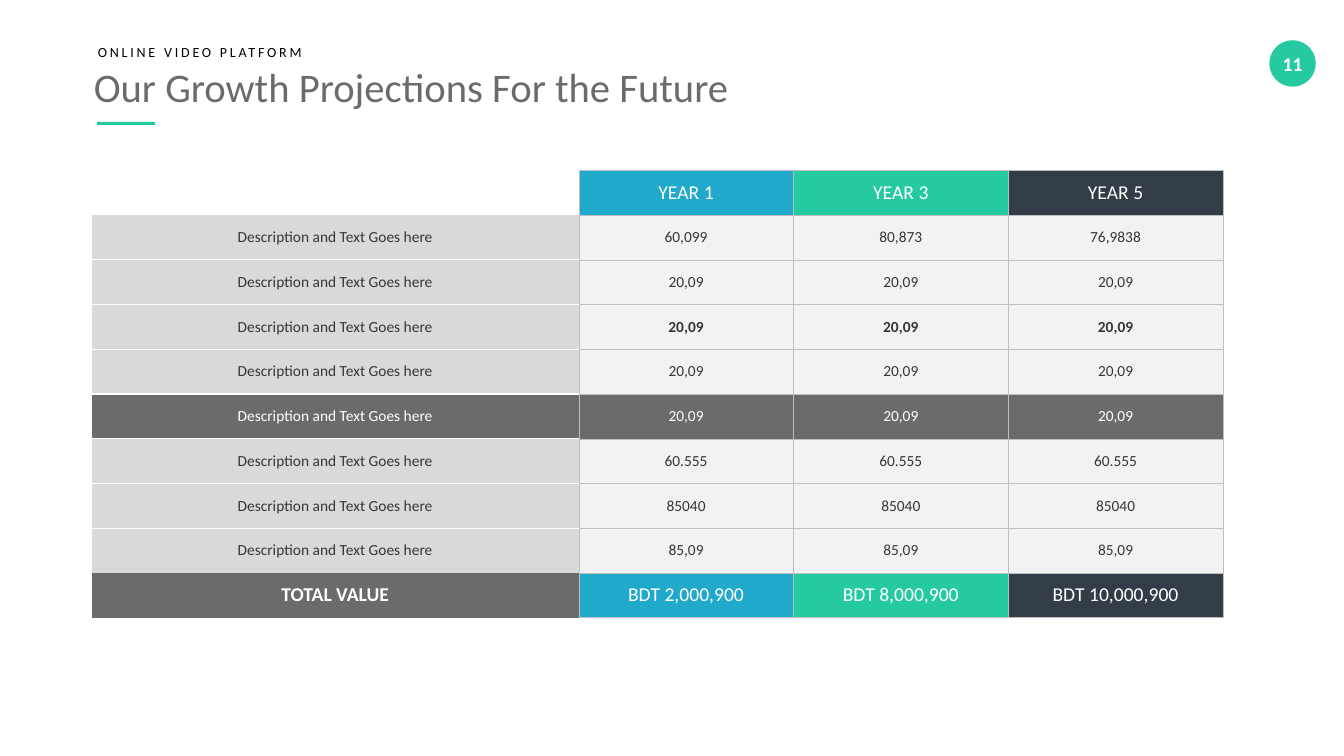
from lxml import etree
from pptx import Presentation
from pptx.dml.color import RGBColor
from pptx.enum.shapes import MSO_SHAPE
from pptx.enum.text import MSO_ANCHOR, MSO_AUTO_SIZE, PP_ALIGN
from pptx.oxml.ns import qn
from pptx.util import Inches, Pt

LEFT, CENTER = PP_ALIGN.LEFT, PP_ALIGN.CENTER
MIDDLE = MSO_ANCHOR.MIDDLE
FIXED = MSO_AUTO_SIZE.NONE
OVAL, RECT = MSO_SHAPE.OVAL, MSO_SHAPE.RECTANGLE

WHITE = RGBColor(0xFF, 0xFF, 0xFF)
BLACK = RGBColor(0, 0, 0)
GREEN = RGBColor(0x25, 0xCA, 0xA0)
BLUE = RGBColor(0x20, 0xA9, 0xCA)
NAVY = RGBColor(0x33, 0x3D, 0x47)
GRAY = RGBColor(0x6B, 0x6B, 0x6B)
SILVER = RGBColor(0xD9, 0xD9, 0xD9)
PALE = RGBColor(0xF2, 0xF2, 0xF2)
INK = RGBColor(0x36, 0x36, 0x36)
EDGE = RGBColor(0xBF, 0xBF, 0xBF)

FONT = "Calibri"
TITLE = "Our Growth Projections For the Future"
KICKER = "ONLINE VIDEO PLATFORM"
PAGE = "11"
LABEL = "Description and Text Goes here"
ROWS = [
    ("", "YEAR 1", "YEAR 3", "YEAR 5"),
    (LABEL, "60,099", "80,873", "76,9838"),
    (LABEL, "20,09", "20,09", "20,09"),
    (LABEL, "20,09", "20,09", "20,09"),
    (LABEL, "20,09", "20,09", "20,09"),
    (LABEL, "20,09", "20,09", "20,09"),
    (LABEL, "60.555", "60.555", "60.555"),
    (LABEL, "85040", "85040", "85040"),
    (LABEL, "85,09", "85,09", "85,09"),
    ("TOTAL VALUE", "BDT 2,000,900", "BDT 8,000,900", "BDT 10,000,900"),
]
HEADS = (GRAY, BLUE, GREEN, NAVY)
LAST = len(ROWS) - 1
BOLD_ROW, DARK_ROW = 3, 5
COLS = (4.83, 2.13, 2.13, 2.13)
ROW_H = 0.444


def style(para, size, color, bold=False, align=CENTER):
    para.alignment = align
    for run in para.runs:
        font = run.font
        font.name, font.size, font.bold = FONT, Pt(size), bold
        font.color.rgb = color


def write(shape, text, size, color, bold=False, align=CENTER):
    """Fill a shape with one unwrapped line that has no insets."""
    frame = shape.text_frame
    frame.text = text
    frame.word_wrap = False
    frame.auto_size = FIXED
    frame.vertical_anchor = MIDDLE
    frame.margin_left = frame.margin_right = 0
    frame.margin_top = frame.margin_bottom = 0
    style(frame.paragraphs[0], size, color, bold, align)


def add_block(slide, kind, *box):
    block = slide.shapes.add_shape(kind, *map(Inches, box))
    block.shadow.inherit = False
    block.fill.solid()
    block.fill.fore_color.rgb = GREEN
    block.line.fill.background()
    return block


def edges(row, col):
    """Give the (colour, points) of each cell side; None means no line."""
    thin, thick = (EDGE, 0.25), (WHITE, 1)
    if col:
        return {"L": thin, "R": thin, "T": thin, "B": thin}
    body = 0 < row < LAST
    return {
        "L": thick if body else None,
        "R": thin,
        "T": thick if body and row > 1 else None,
        "B": thick if body and row < LAST - 1 else None,
    }


def set_edges(cell, sides):
    props = cell._tc.get_or_add_tcPr()
    for side, edge in sides.items():
        line = etree.SubElement(props, qn("a:ln" + side))
        if edge is None:
            etree.SubElement(line, qn("a:noFill"))
            continue
        color, width = edge
        line.set("w", str(Pt(width)))
        fill = etree.SubElement(line, qn("a:solidFill"))
        etree.SubElement(fill, qn("a:srgbClr")).set("val", str(color))


def cell_look(row, col):
    """Give the fill, text colour, size and weight of a cell."""
    if row in (0, LAST):
        return HEADS[col], WHITE, 14, col == 0
    if row == DARK_ROW:
        return GRAY, WHITE, 11, False
    return (PALE if col else SILVER), INK, 11, row == BOLD_ROW and col > 0


def add_grid(slide):
    frame = slide.shapes.add_table(
        len(ROWS), len(COLS), Inches(0.91), Inches(1.69),
        Inches(sum(COLS)), Inches(ROW_H * len(ROWS)))
    table = frame.table
    table.first_row = table.horz_banding = False
    for col, width in enumerate(COLS):
        table.columns[col].width = Inches(width)
    for row, texts in enumerate(ROWS):
        table.rows[row].height = Inches(ROW_H)
        for col, text in enumerate(texts):
            cell = table.cell(row, col)
            set_edges(cell, edges(row, col))
            if not text:
                cell.fill.background()
                continue
            fill, color, size, bold = cell_look(row, col)
            cell.fill.solid()
            cell.fill.fore_color.rgb = fill
            cell.vertical_anchor = MIDDLE
            cell.margin_left = cell.margin_right = Inches(0.12)
            cell.margin_top = cell.margin_bottom = Inches(0.06)
            cell.text_frame.text = text
            style(cell.text_frame.paragraphs[0], size, color, bold)


def main():
    deck = Presentation()
    deck.slide_width, deck.slide_height = Inches(13.33), Inches(7.5)
    slide = deck.slides.add_slide(deck.slide_layouts[5])

    badge = add_block(slide, OVAL, 12.59, 0.4, 0.46, 0.46)
    write(badge, PAGE, 14, WHITE, bold=True)

    title = slide.shapes.title
    title.left, title.top = Inches(0.93), Inches(0.61)
    title.width, title.height = Inches(6.38), Inches(0.49)
    write(title, TITLE, 29, GRAY, align=LEFT)

    kicker = slide.shapes.add_textbox(
        Inches(0.97), Inches(0.43), Inches(2.08), Inches(0.17))
    write(kicker, KICKER, 10, BLACK, align=LEFT)
    run = kicker.text_frame.paragraphs[0].runs[0]
    run.font._element.set("spc", "200")

    add_block(slide, RECT, 0.96, 1.21, 0.58, 0.03)
    add_grid(slide)
    deck.save("out.pptx")


if __name__ == "__main__":
    main()
